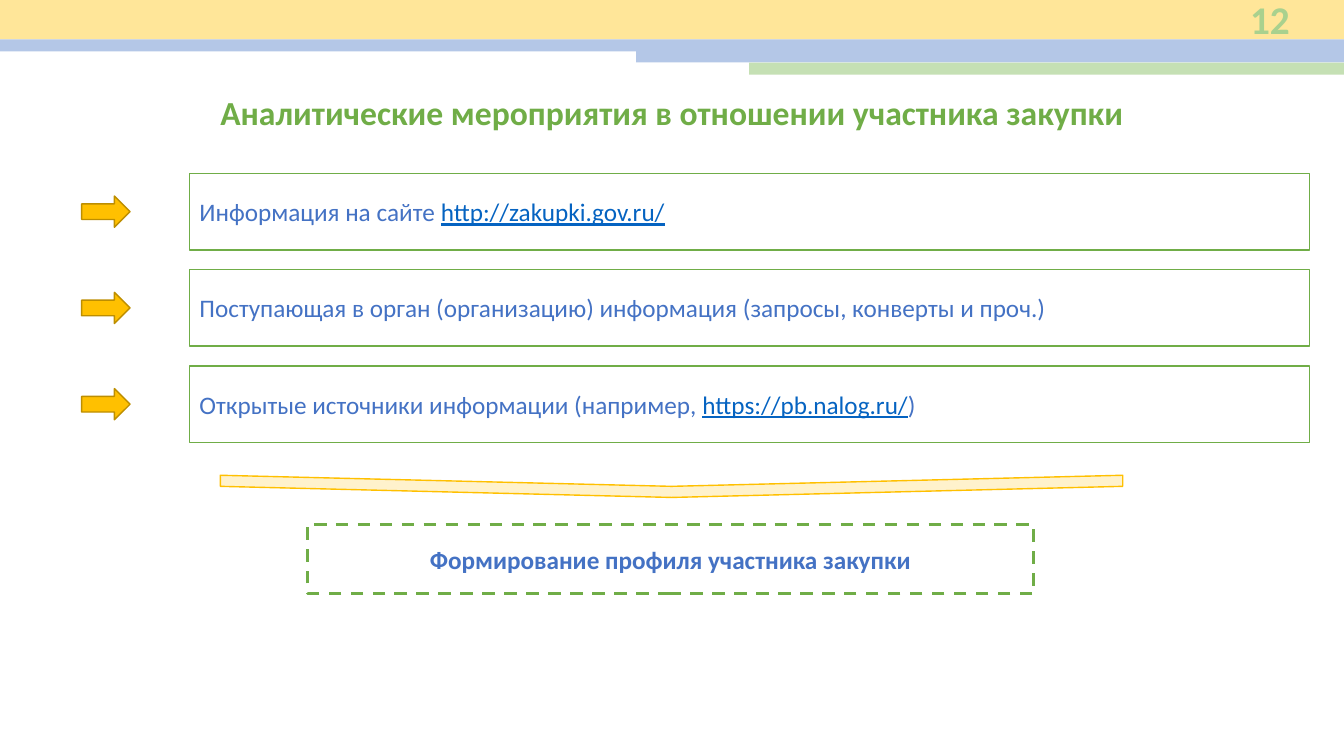
from pptx import Presentation
from pptx.dml.color import RGBColor
from pptx.enum.dml import MSO_LINE
from pptx.enum.shapes import MSO_SHAPE
from pptx.enum.text import MSO_ANCHOR, MSO_AUTO_SIZE, PP_ALIGN
from pptx.util import Inches, Pt

TITLE = "Аналитические мероприятия в отношении участника закупки"
PAGE_NUMBER = "12"
SOURCES = [
    [("Информация на сайте ", "text"), ("http://zakupki.gov.ru/", "link")],
    [("Поступающая в орган (организацию) информация (запросы, конверты и проч.)", "text")],
    [("Открытые источники информации (например, ", "text"),
     ("https://pb.nalog.ru/", "link"), (")", "text")],
]
RESULT = "Формирование профиля участника закупки"

COLORS = {
    "yellow": "FFE699", "blue": "B4C7E7", "pale_green": "C5E0B4",
    "green": "70AD47", "number": "A9D18E", "text": "4472C4", "link": "0563C1",
    "cream": "FFF2CC", "gold": "FFC000", "dark_gold": "BD8E00",
}
SLIDE_W, SLIDE_H = 13.33, 7.5
HEADER_BANDS = [
    (0, 0, 0.39, "yellow"),
    (0, 0.39, 0.12, "blue"),
    (6.31, 0.5, 0.12, "blue"),
    (7.43, 0.62, 0.12, "pale_green"),
]
ROW_TOP, ROW_STEP, ROW_H = 1.72, 0.955, 0.76
ROW_LEFT, ROW_W = 1.88, 11.11
ARROW_LEFT, ARROW_W, ARROW_H = 0.81, 0.48, 0.31


def color(name):
    return RGBColor.from_string(COLORS[name])


def add_box(kind, left, top, width, height, fill=None, line=None, weight=1):
    box = slide.shapes.add_shape(
        kind, Inches(left), Inches(top), Inches(width), Inches(height))
    box.shadow.inherit = False
    if fill:
        box.fill.solid()
        box.fill.fore_color.rgb = color(fill)
    else:
        box.fill.background()
    if line:
        box.line.color.rgb = color(line)
        box.line.width = Pt(weight)
    else:
        box.line.fill.background()
    return box


def write(holder, pieces, size, align, bold=False, anchor=MSO_ANCHOR.MIDDLE):
    frame = holder.text_frame
    frame.word_wrap = True
    frame.auto_size = MSO_AUTO_SIZE.NONE
    frame.vertical_anchor = anchor
    paragraph = frame.paragraphs[0]
    paragraph.alignment = align
    for words, tone in pieces:
        run = paragraph.add_run()
        run.text = words
        run.font.name = "Calibri"
        run.font.size = Pt(size)
        run.font.bold = bold
        run.font.underline = tone == "link"
        run.font.color.rgb = color(tone)


deck = Presentation()
deck.slide_width, deck.slide_height = Inches(SLIDE_W), Inches(SLIDE_H)
slide = deck.slides.add_slide(deck.slide_layouts[5])

for left, top, height, fill in HEADER_BANDS:
    add_box(MSO_SHAPE.RECTANGLE, left, top, SLIDE_W - left, height, fill)

title = slide.shapes.title
title.left, title.top = Inches(0.6), Inches(0.86)
title.width, title.height = Inches(12.13), Inches(0.5)
write(title, [(TITLE, "green")], 24, PP_ALIGN.CENTER, True, MSO_ANCHOR.TOP)

page_number = slide.shapes.add_textbox(Inches(11.9), 0, Inches(0.99), Inches(0.38))
write(page_number, [(PAGE_NUMBER, "number")], 28, PP_ALIGN.RIGHT, True)

for index, pieces in enumerate(SOURCES):
    top = ROW_TOP + index * ROW_STEP
    source = add_box(MSO_SHAPE.RECTANGLE, ROW_LEFT, top, ROW_W, ROW_H, line="green")
    write(source, pieces, 18, PP_ALIGN.LEFT)
    add_box(MSO_SHAPE.RIGHT_ARROW, ARROW_LEFT, top + (ROW_H - ARROW_H) / 2,
            ARROW_W, ARROW_H, "gold", "dark_gold")

funnel = add_box(MSO_SHAPE.CHEVRON, 6.55, 0.35, 0.22, 8.95, "cream", "gold")
funnel.rotation = 90

result = add_box(MSO_SHAPE.RECTANGLE, 3.05, 5.2, 7.2, 0.69, line="green", weight=2.25)
result.line.dash_style = MSO_LINE.DASH
write(result, [(RESULT, "text")], 18, PP_ALIGN.CENTER, True)

deck.save("out.pptx")
